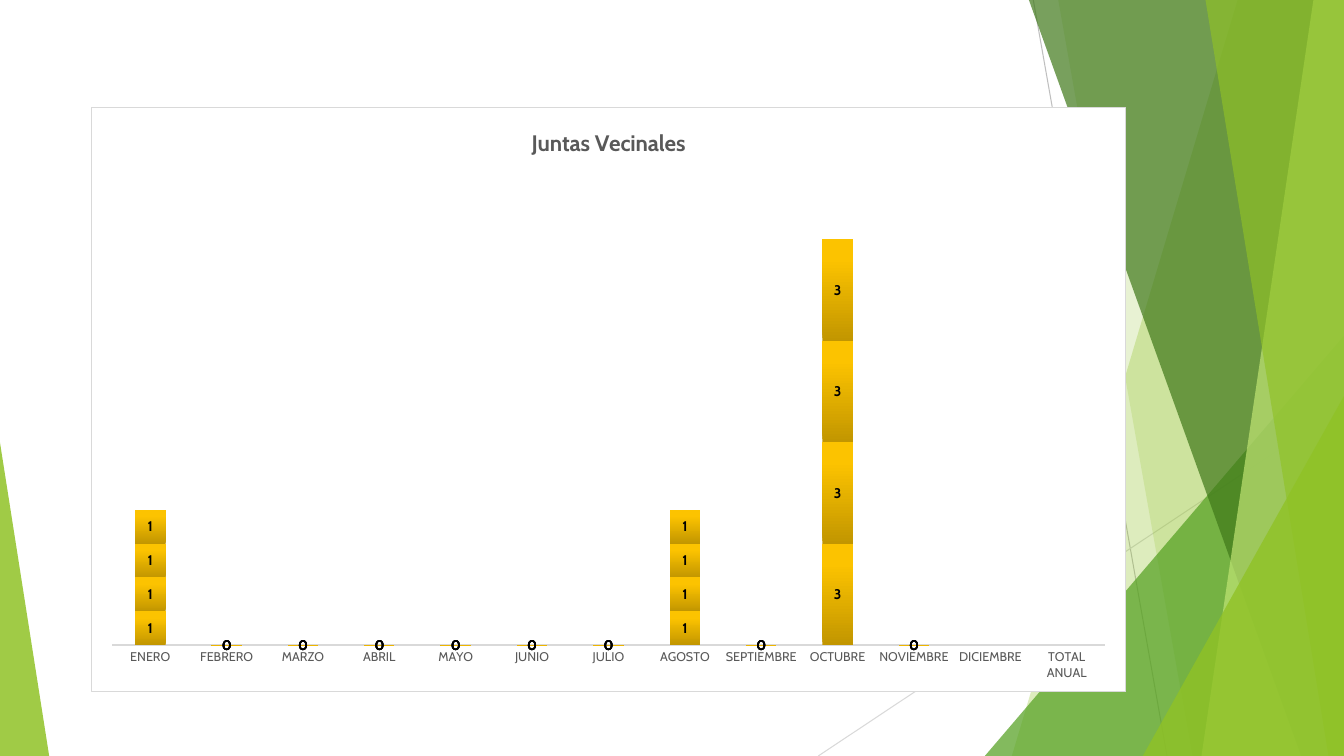
from lxml import etree
from pptx import Presentation
from pptx.chart.data import CategoryChartData
from pptx.dml.color import RGBColor
from pptx.enum.chart import XL_CHART_TYPE, XL_LABEL_POSITION, XL_TICK_MARK
from pptx.enum.shapes import MSO_CONNECTOR, MSO_SHAPE
from pptx.oxml import parse_xml
from pptx.oxml.ns import nsdecls, qn
from pptx.util import Cm, Pt

STACKED = XL_CHART_TYPE.COLUMN_STACKED
CENTER = XL_LABEL_POSITION.CENTER
NO_TICK = XL_TICK_MARK.NONE
STRAIGHT = MSO_CONNECTOR.STRAIGHT
TRIANGLE = MSO_SHAPE.ISOSCELES_TRIANGLE

WIDE, HIGH = 33.87, 19.05
FACE = "Cabin"
COLORS = {
    "white": "FFFFFF", "black": "000000", "text": "595959",
    "gray": "BFBFBF", "pale": "D9D9D9",
    "lime": "90C226", "leaf": "54A021", "pine": "3F7819", "mint": "C0E474",
}
GOLD = [(0, "C29600"), (80, "FCC300"), (100, "FDC400")]
MONTHS = ["ENERO", "FEBRERO", "MARZO", "ABRIL", "MAYO", "JUNIO", "JULIO",
          "AGOSTO", "SEPTIEMBRE", "OCTUBRE", "NOVIEMBRE", "DICIEMBRE",
          "TOTAL ANUAL"]
COUNTS = [1, 0, 0, 0, 0, 0, 0, 1, 0, 3, 0, None, None]
LAYERS = 4
PLOT = {"x": 0.02, "y": 0.11, "w": 0.96, "h": 0.81}


def color(name):
    return RGBColor.from_string(COLORS[name])


class Board:
    """Holds the style and the current slide."""

    def __init__(self, slide):
        self.slide = slide
        self.shapes = slide.shapes

    def font(self, font, **form):
        tone = form.pop("tone")
        for key, value in {"name": FACE, **form}.items():
            setattr(font, key, value)
        font.color.rgb = color(tone)

    def line(self, x1, y1, x2, y2, tone):
        line = self.shapes.add_connector(
            STRAIGHT, Cm(x1), Cm(y1), Cm(x2), Cm(y2))
        line.line.color.rgb = color(tone)
        line.line.width = Pt(0.75)
        etree.SubElement(line._element.spPr, qn("a:effectLst"))

    def paint(self, shape, tone, alpha):
        """Fill a shape with a partly clear colour and no outline."""
        shape.shadow.inherit = False
        shape.line.fill.background()
        shape.fill.solid()
        shape.fill.fore_color.rgb = color(tone)
        node = shape._element.spPr.find(".//" + qn("a:srgbClr"))
        etree.SubElement(node, qn("a:alpha"), val=str(alpha * 1000))

    def strip(self, top, base, tone, alpha):
        """Draw a band from a slanted left edge to the slide's right edge."""
        pen = self.shapes.build_freeform(Cm(top), Cm(0), scale=1.0)
        edge = [(WIDE, 0), (WIDE, HIGH), (base, HIGH)]
        pen.add_line_segments([(Cm(x), Cm(y)) for x, y in edge], close=True)
        self.paint(pen.convert_to_shape(), tone, alpha)

    def corner(self, left, top, width, apex, tone, alpha):
        """Draw a right triangle standing on the slide's lower edge."""
        shape = self.shapes.add_shape(
            TRIANGLE, Cm(left), Cm(top), Cm(width), Cm(HIGH - top))
        shape.adjustments[0] = apex
        self.paint(shape, tone, alpha)

    def chart(self, left, top, width, height):
        data = CategoryChartData()
        data.categories = MONTHS
        for num in range(1, LAYERS + 1):
            data.add_series(f"Series {num}", COUNTS)
        chart = self.shapes.add_chart(
            STACKED, Cm(left), Cm(top), Cm(width), Cm(height), data).chart
        self.font(chart.font, size=Pt(10), tone="black")
        chart.has_legend = False
        chart.has_title = True
        frame = chart.chart_title.text_frame
        frame.text = "Juntas Vecinales"
        self.font(frame.paragraphs[0].runs[0].font,
                  size=Pt(16), bold=True, tone="text")
        self.axes(chart)
        self.bars(chart.plots[0])
        self.frame(chart)

    def axes(self, chart):
        axis = chart.category_axis
        axis.major_tick_mark = NO_TICK
        axis.format.line.color.rgb = color("pale")
        axis.format.line.width = Pt(1)
        self.font(axis.tick_labels.font, size=Pt(9), bold=False, tone="text")
        form = {"minimum_scale": 0, "maximum_scale": 14,
                "has_major_gridlines": False, "visible": False}
        for key, value in form.items():
            setattr(chart.value_axis, key, value)

    def bars(self, plot):
        for key, value in {"gap_width": 150, "overlap": 100,
                           "vary_by_categories": False}.items():
            setattr(plot, key, value)
        stops = "".join(
            f'<a:gs pos="{pos * 1000}"><a:srgbClr val="{tone}"/></a:gs>'
            for pos, tone in GOLD)
        for bar in plot.series:
            bar.format.fill.background()
            blank = bar._element.spPr.find(qn("a:noFill"))
            blank.getparent().replace(blank, parse_xml(
                f'<a:gradFill {nsdecls("a")}><a:gsLst>{stops}</a:gsLst>'
                '<a:lin ang="16200000" scaled="0"/></a:gradFill>'))
            label = bar.data_labels
            label.show_value = True
            label.position = CENTER
            self.font(label.font, size=Pt(10), bold=True, tone="black")

    def frame(self, chart):
        """Set the chart's backdrop, its border and the plot's place."""
        root = chart.element.find(qn("c:chart"))
        root.addnext(parse_xml(
            f'<c:spPr {nsdecls("c", "a")}><a:solidFill>'
            f'<a:srgbClr val="{COLORS["white"]}"/></a:solidFill>'
            f'<a:ln w="{Pt(0.75)}"><a:solidFill>'
            f'<a:srgbClr val="{COLORS["pale"]}"/></a:solidFill></a:ln></c:spPr>'))
        area = root.find(qn("c:plotArea"))
        old = area.find(qn("c:layout"))
        if old is not None:
            area.remove(old)
        modes = '<c:xMode val="edge"/><c:yMode val="edge"/>'
        sizes = "".join(f'<c:{key} val="{val}"/>' for key, val in PLOT.items())
        area.insert(0, parse_xml(
            f'<c:layout {nsdecls("c")}><c:manualLayout>'
            f'<c:layoutTarget val="inner"/>{modes}{sizes}'
            '</c:manualLayout></c:layout>'))


def main():
    deck = Presentation()
    deck.slide_width, deck.slide_height = Cm(WIDE), Cm(HIGH)
    board = Board(deck.slides.add_slide(deck.slide_layouts[6]))
    board.line(26.04, 0, 29.41, HIGH, "gray")
    board.line(WIDE, 10.24, 20.62, HIGH, "pale")
    board.strip(31.19, 25.5, "lime", 30)
    board.strip(26.67, 30.05, "lime", 20)
    board.corner(24.82, 8.46, 9.05, 1, "leaf", 72)
    board.strip(25.93, 32.79, "pine", 70)
    board.strip(33.1, 30.28, "mint", 70)
    board.strip(30.38, 33.48, "lime", 65)
    board.corner(28.8, 9.98, 5.07, 1, "lime", 80)
    board.corner(0, 11.15, 1.24, 0, "lime", 85)
    board.chart(2.29, 2.69, 26.09, 14.76)
    deck.save("out.pptx")


if __name__ == "__main__":
    main()
